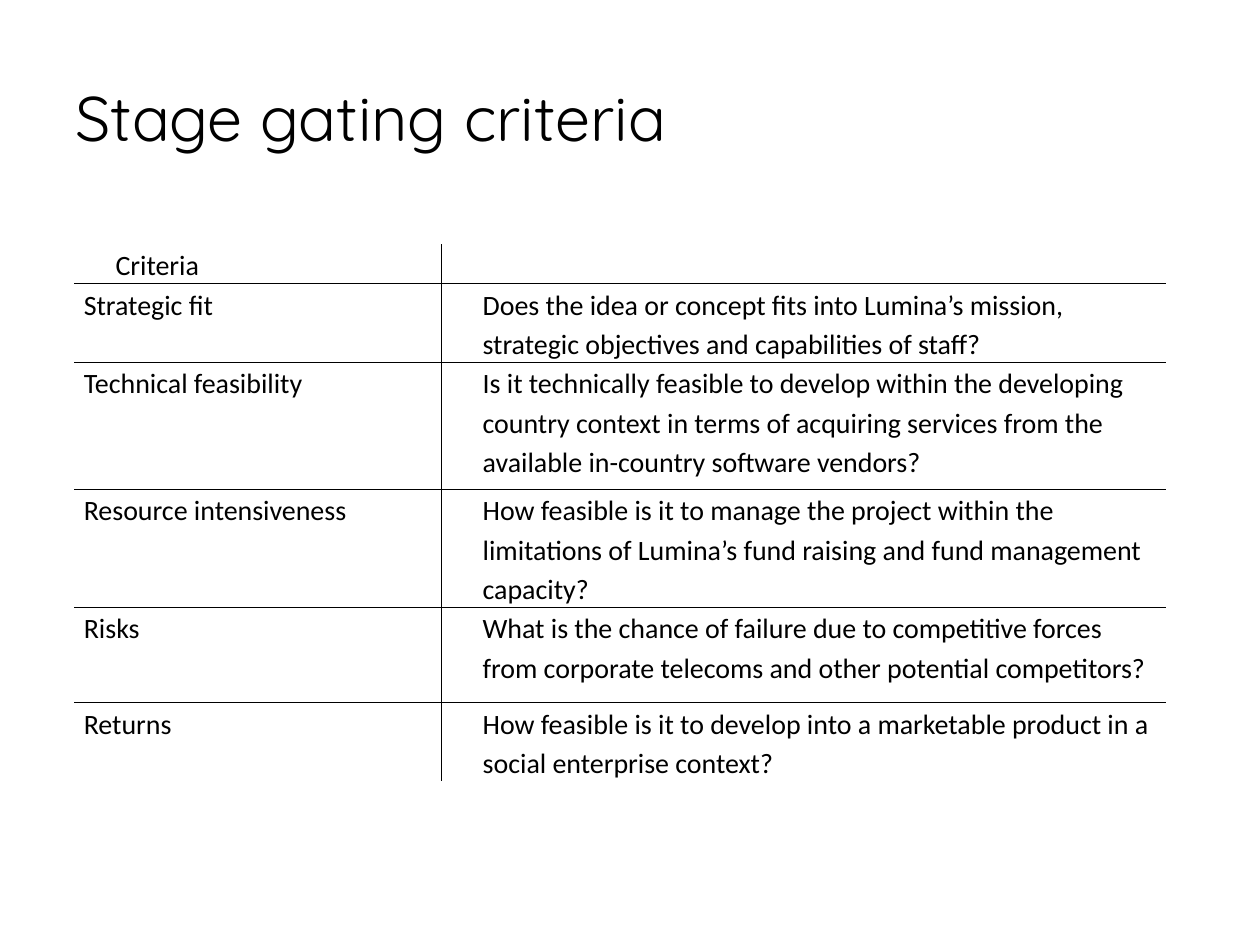
"""Build the stage gating criteria slide."""
from pptx import Presentation
from pptx import util as u
from pptx.dml.color import RGBColor
from pptx.enum import text
from pptx.oxml import xmlchemy

BLACK = RGBColor(0x00, 0x00, 0x00)

TITLE = {"name": "Quicksand", "size": u.Pt(36)}
BODY = {"name": "Calibri", "size": u.Pt(16)}

COLUMN_WIDTHS = (7.4, 14.61)
CRITERIA = (
    ("Criteria", "", 0.79),
    ("Strategic fit",
     "Does the idea or concept fits into Lumina’s mission, strategic "
     "objectives and capabilities of staff?", 1.59),
    ("Technical feasibility",
     "Is it technically feasible to develop within the developing country "
     "context in terms of acquiring services from the available in-country "
     "software vendors?", 2.56),
    ("Resource intensiveness",
     "How feasible is it to manage the project within the limitations of "
     "Lumina’s fund raising and fund management capacity?", 2.38),
    ("Risks",
     "What is the chance of failure due to competitive forces from corporate "
     "telecoms and other potential competitors?", 1.92),
    ("Returns",
     "How feasible is it to develop into a marketable product in a social "
     "enterprise context?", 1.58),
)


def set_values(target, values):
    """Set each named attribute of the target."""
    for name, value in values.items():
        setattr(target, name, value)


def add_span(para, words, values):
    """Add formatted words to a paragraph."""
    span = para.add_run()
    span.text = words
    set_values(span.font, values)
    span.font.color.rgb = BLACK


def add_title(page, words):
    """Add the slide title in a vertically centred box."""
    box = page.shapes.add_textbox(u.Cm(1.27), u.Cm(0.76), u.Cm(22.86), u.Cm(3.18))
    set_values(box.text_frame, {"word_wrap": True,
                                "vertical_anchor": text.MSO_ANCHOR.MIDDLE})
    add_span(box.text_frame.paragraphs[0], words, TITLE)


def add_borders(cell, visible):
    """Draw thin lines on the visible sides of a cell and clear the others."""
    properties = cell._tc.get_or_add_tcPr()
    for side in "LRTB":
        line = xmlchemy.OxmlElement(f"a:ln{side}")
        line.set("w", str(u.Pt(0.25)))
        if side in visible:
            fill = xmlchemy.OxmlElement("a:solidFill")
            color = xmlchemy.OxmlElement("a:srgbClr")
            color.set("val", str(BLACK))
            fill.append(color)
        else:
            fill = xmlchemy.OxmlElement("a:noFill")
        line.append(fill)
        properties.append(line)


def fill_cell(cell, words, indent, hanging, borders):
    """Format one cell and write its words."""
    set_values(cell, {"margin_left": u.Cm(0.19), "margin_right": u.Cm(0.19),
                      "margin_top": 0, "margin_bottom": 0})
    add_borders(cell, borders)
    cell.fill.background()
    para = cell.text_frame.paragraphs[0]
    para.line_spacing = 1.15
    layout = para._p.get_or_add_pPr()
    layout.set("marL", str(u.Cm(indent)))
    layout.set("indent", str(u.Cm(-hanging)))
    if words:
        add_span(para, words, BODY)


def add_criteria_table(page):
    """Add the table of criteria, ruled only between its cells."""
    frame = page.shapes.add_table(
        len(CRITERIA), 2, u.Cm(1.5), u.Cm(4.92),
        u.Cm(sum(COLUMN_WIDTHS)), u.Cm(sum(row[2] for row in CRITERIA)))
    table = frame.table
    set_values(table, {"first_row": False, "horz_banding": False})
    for column, width in zip(table.columns, COLUMN_WIDTHS):
        column.width = u.Cm(width)
    last = len(CRITERIA) - 1
    for index, (criterion, question, height) in enumerate(CRITERIA):
        table.rows[index].height = u.Cm(height)
        rules = ("T" if index > 0 else "") + ("B" if index < last else "")
        indent, hanging = (0.95, 0.95) if index else (0.64, 0)
        fill_cell(table.cell(index, 0), criterion, indent, hanging, rules + "R")
        fill_cell(table.cell(index, 1), question, 0.64, 0, rules + "L")


def main():
    """Build and save the deck."""
    deck = Presentation()
    set_values(deck, {"slide_width": u.Cm(25.4), "slide_height": u.Cm(19.05)})
    page = deck.slides.add_slide(deck.slide_layouts[6])
    add_title(page, "Stage gating criteria")
    add_criteria_table(page)
    deck.save("out.pptx")


if __name__ == "__main__":
    main()
